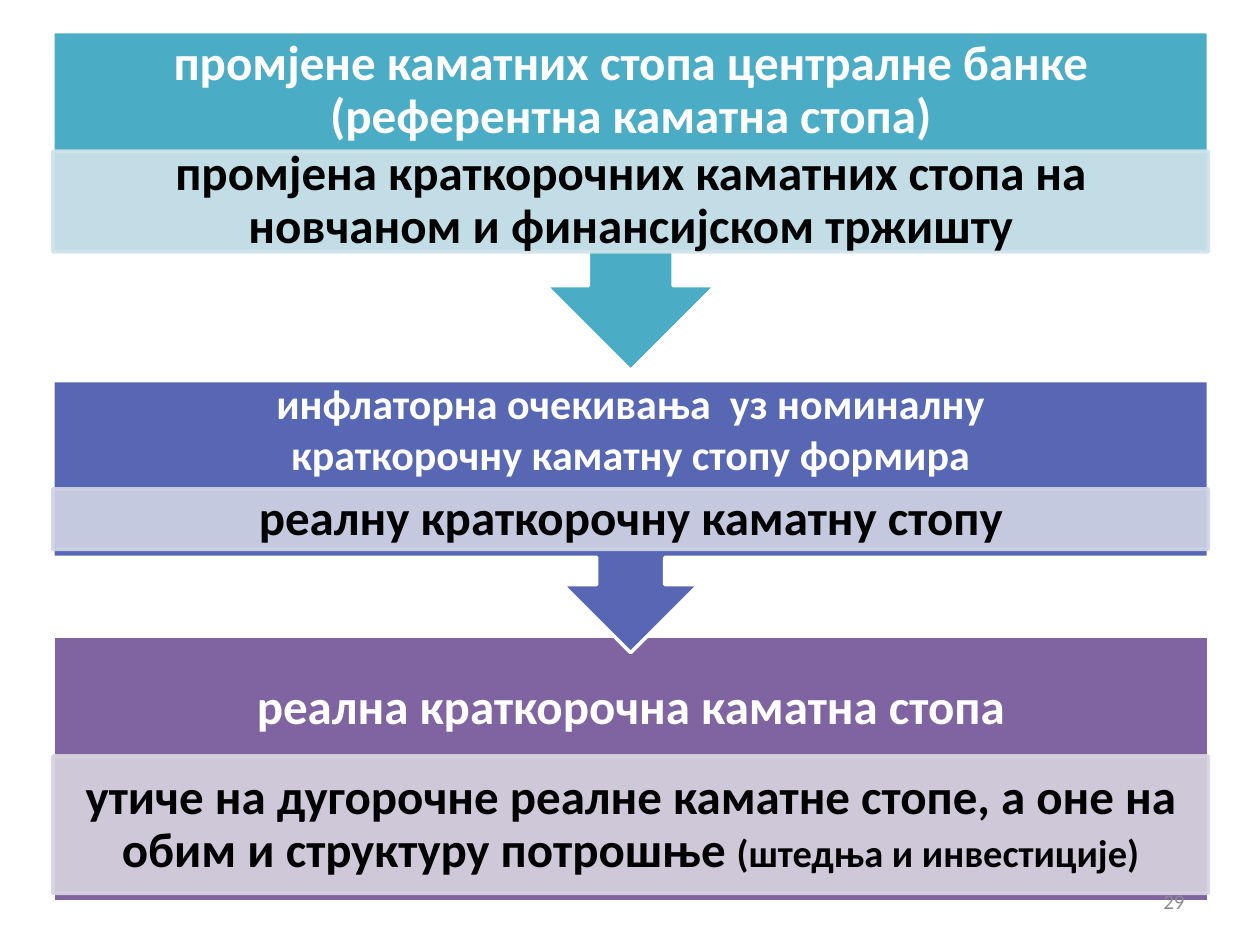
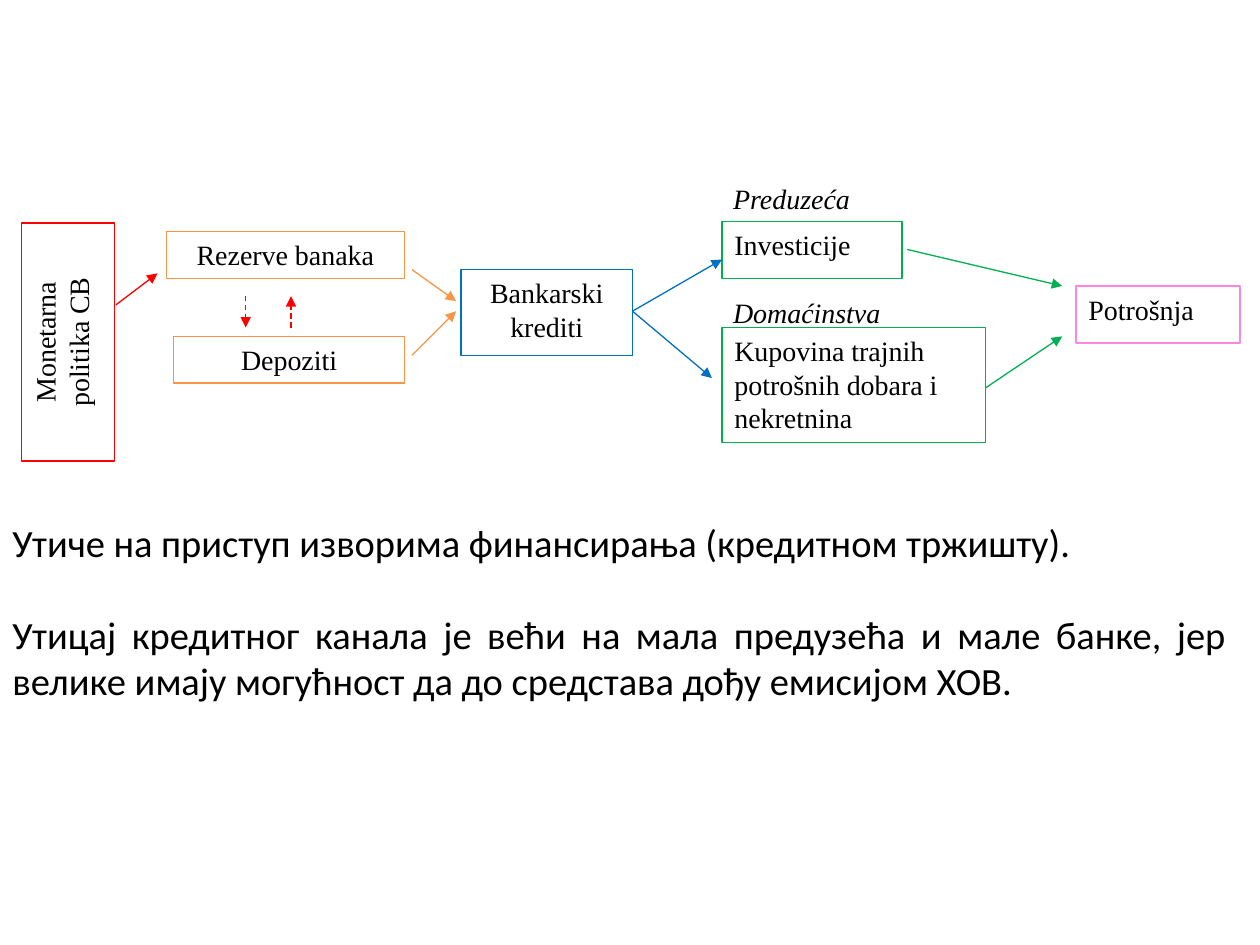
from lxml import etree
from pptx import Presentation
from pptx.dml.color import RGBColor
from pptx.enum.dml import MSO_LINE
from pptx.enum.shapes import MSO_CONNECTOR, MSO_SHAPE
from pptx.enum.text import MSO_ANCHOR, PP_ALIGN
from pptx.oxml.ns import qn
from pptx.util import Inches, Pt

RECT, CALLOUT = MSO_SHAPE.RECTANGLE, MSO_SHAPE.UP_ARROW_CALLOUT
STRAIGHT, DASH = MSO_CONNECTOR.STRAIGHT, MSO_LINE.DASH
TOP, MIDDLE = MSO_ANCHOR.TOP, MSO_ANCHOR.MIDDLE
LEFT, CENTER, RIGHT, JUSTIFY = (PP_ALIGN.LEFT, PP_ALIGN.CENTER,
                                PP_ALIGN.RIGHT, PP_ALIGN.JUSTIFY)

WIDTH, HEIGHT = 10, 7.5
COLS, ROWS = 40, 30
BLANK = 6
SANS, SERIF = "Calibri", "Times New Roman"
COLORS = {
    "white": "FFFFFF", "black": "000000", "gray": "8C8C8C",
    "teal": "4BACC6", "pale teal": "D0E3EA",
    "indigo": "5767B4", "pale indigo": "D1D4E5",
    "purple": "8064A2", "pale purple": "D8D3E0",
    "red": "FF0000", "orange": "F79646", "blue": "0070C0",
    "green": "00B050", "pink": "FD87DE",
}


def color(name):
    return RGBColor.from_string(COLORS[name])


def col(n):
    return Inches(n * WIDTH / COLS)


def row(n):
    return Inches(n * HEIGHT / ROWS)


def write(frame, paras, size=16, font=SERIF, ink="black", bold=False,
          italic=False, align=LEFT, anchor=TOP, inset=(0.1, 0.05),
          lead=None, gap=0):
    """Fill a frame; a paragraph is a string or a list of (text, size) runs."""
    frame.word_wrap = True
    frame.vertical_anchor = anchor
    frame.margin_left = frame.margin_right = Inches(inset[0])
    frame.margin_top = frame.margin_bottom = Inches(inset[1])
    for i, runs in enumerate(paras):
        para = frame.add_paragraph() if i else frame.paragraphs[0]
        para.alignment = align
        if lead:
            para.line_spacing = lead
        if i and gap:
            para.space_before = Pt(gap)
        for words, points in [(runs, size)] if isinstance(runs, str) else runs:
            run = para.add_run()
            run.text = words
            face = run.font
            face.name, face.size = font, Pt(points)
            face.bold, face.italic = bold, italic
            face.color.rgb = color(ink)


class Deck:
    """Holds the presentation, its shared style and the current slide."""

    def __init__(self):
        self.prs = Presentation()
        self.prs.slide_width, self.prs.slide_height = Inches(WIDTH), Inches(HEIGHT)
        self.slide = None

    def page(self):
        self.slide = self.prs.slides.add_slide(self.prs.slide_layouts[BLANK])

    def shape(self, x, y, w, h, fill="white", edge=None, weight=0.75,
              kind=RECT, alpha=None):
        form = self.slide.shapes.add_shape(kind, col(x), row(y), col(w), row(h))
        form.shadow.inherit = False
        form.fill.solid()
        form.fill.fore_color.rgb = color(fill)
        if edge:
            form.line.color.rgb = color(edge)
            form.line.width = Pt(weight)
        else:
            form.line.fill.background()
        if alpha:
            for tone in form.element.spPr.iter(qn("a:srgbClr")):
                etree.SubElement(tone, qn("a:alpha"), val=str(alpha * 1000))
        return form

    def text(self, x, y, w, h, paras, **style):
        box = self.slide.shapes.add_textbox(col(x), row(y), col(w), row(h))
        write(box.text_frame, paras, **style)

    def box(self, place, paras, edge=None, weight=0.75, turn=False, **style):
        form = self.shape(*place, edge=edge, weight=weight)
        write(form.text_frame, paras, **style)
        if turn:
            form.element.find(".//" + qn("a:bodyPr")).set("vert", "vert270")

    def arrow(self, start, end, ink, dash=False):
        link = self.slide.shapes.add_connector(
            STRAIGHT, col(start[0]), row(start[1]), col(end[0]), row(end[1]))
        link.line.color.rgb = color(ink)
        link.line.width = Pt(0.75)
        if dash:
            link.line.dash_style = DASH
        etree.SubElement(link.line._get_or_add_ln(), qn("a:tailEnd"),
                         type="triangle")
        etree.SubElement(link.element.spPr, qn("a:effectLst"))

    def step(self, hue, top, high, head, detail, kind=CALLOUT, size=28, lead=0.9):
        """Draw a process band; head is (height, text), detail (top, height, text)."""
        x, w = 1.68, 36.68
        band = self.shape(x, top, w, high, hue, "white", 2, kind)
        if kind == CALLOUT:
            band.rotation = 180
        self.text(x, top, w, head[0], head[1], size=size, font=SANS, bold=True,
                  ink="white", align=CENTER, anchor=MIDDLE, inset=(0.22, 0.2),
                  lead=lead)
        pale = "pale " + hue
        strip = self.shape(x, detail[0], w, detail[1], pale, pale, 2, alpha=90)
        write(strip.text_frame, detail[2], size=28, font=SANS, bold=True,
              align=CENTER, anchor=MIDDLE, inset=(0.22, 0.04), lead=0.9)

    def number(self, value):
        self.text(28.68, 27.8, 9.32, 1.6, [str(value)], size=12, font=SANS,
                  ink="gray", align=RIGHT, anchor=MIDDLE)


def rates(deck):
    deck.page()
    deck.step("purple", 20.2, 8.44,
              (4.56, ["реална краткорочна каматна стопа"]),
              (24, 4.36, [[("утиче на дугорочне реалне каматне стопе, а оне на "
                            "обим и структуру потрошње ", 28),
                           ("(штедња и инвестиције)", 22)]]), kind=RECT)
    deck.step("indigo", 12.08, 8.64,
              (3.04, ["инфлаторна очекивања  уз номиналну",
                      "краткорочну каматну стопу формира"]),
              (15.52, 1.92, ["реалну краткорочну каматну стопу"]),
              size=24, lead=None)
    deck.step("teal", 1, 10.76,
              (3.76, ["промјене каматних стопа централне банке "
                      "(референтна каматна стопа)"]),
              (4.8, 3.2, ["промјена краткорочних каматних стопа на "
                          "новчаном и финансијском тржишту"]))
    deck.number(29)


def credit(deck):
    deck.page()
    deck.text(0, 16.28, 39.32, 7.52, [
        "Утиче на приступ изворима финансирања (кредитном тржишту).",
        "Утицај кредитног канала је већи на мала предузећа и мале банке, јер "
        "велике имају могућност да до средстава дођу емисијом ХОВ.",
    ], size=22, font=SANS, align=JUSTIFY, gap=26)

    deck.box((22.88, 5.56, 5.08, 1.52), ["Preduzeća"], italic=True)
    deck.box((22.88, 9.2, 6.68, 1.52), ["Domaćinstva"], italic=True)

    deck.box((0.68, 7.08, 2.96, 7.56), ["Monetarna", "politika CB"], "red",
             turn=True, align=CENTER)
    for place, paras, edge in [
        ((5.28, 7.36, 7.56, 1.48), ["Rezerve banaka"], "orange"),
        ((5.52, 10.68, 7.32, 1.48), ["Depoziti"], "orange"),
        ((14.64, 8.56, 5.44, 2.72), ["Bankarski", "krediti"], "blue"),
    ]:
        deck.box(place, paras, edge, align=CENTER)
    deck.box((22.92, 7.04, 5.72, 1.8), ["Investicije"], "green")
    deck.box((22.92, 10.4, 8.36, 3.64),
             ["Kupovina trajnih potrošnih dobara i nekretnina"], "green")
    deck.box((34.16, 9.08, 5.2, 1.8), ["Potrošnja"], "pink", weight=1)

    loans = (20.08, 9.88)
    for start, end, ink in [
        ((3.68, 9.68), (5, 8.68), "red"),
        ((13.08, 8.56), (14.48, 9.56), "orange"),
        ((13.08, 11.28), (14.48, 9.88), "orange"),
        (loans, (22.92, 8.24), "blue"),
        (loans, (22.6, 12), "blue"),
        ((28.8, 7.92), (33.72, 9.08), "green"),
        ((31.28, 12.32), (33.72, 10.68), "green"),
    ]:
        deck.arrow(start, end, ink)
    deck.arrow((7.8, 9.4), (7.8, 10.4), "red", dash=True)
    deck.arrow((9.24, 10.4), (9.24, 9.4), "red", dash=True)


def main():
    deck = Deck()
    rates(deck)
    credit(deck)
    deck.prs.save("out.pptx")


if __name__ == "__main__":
    main()
